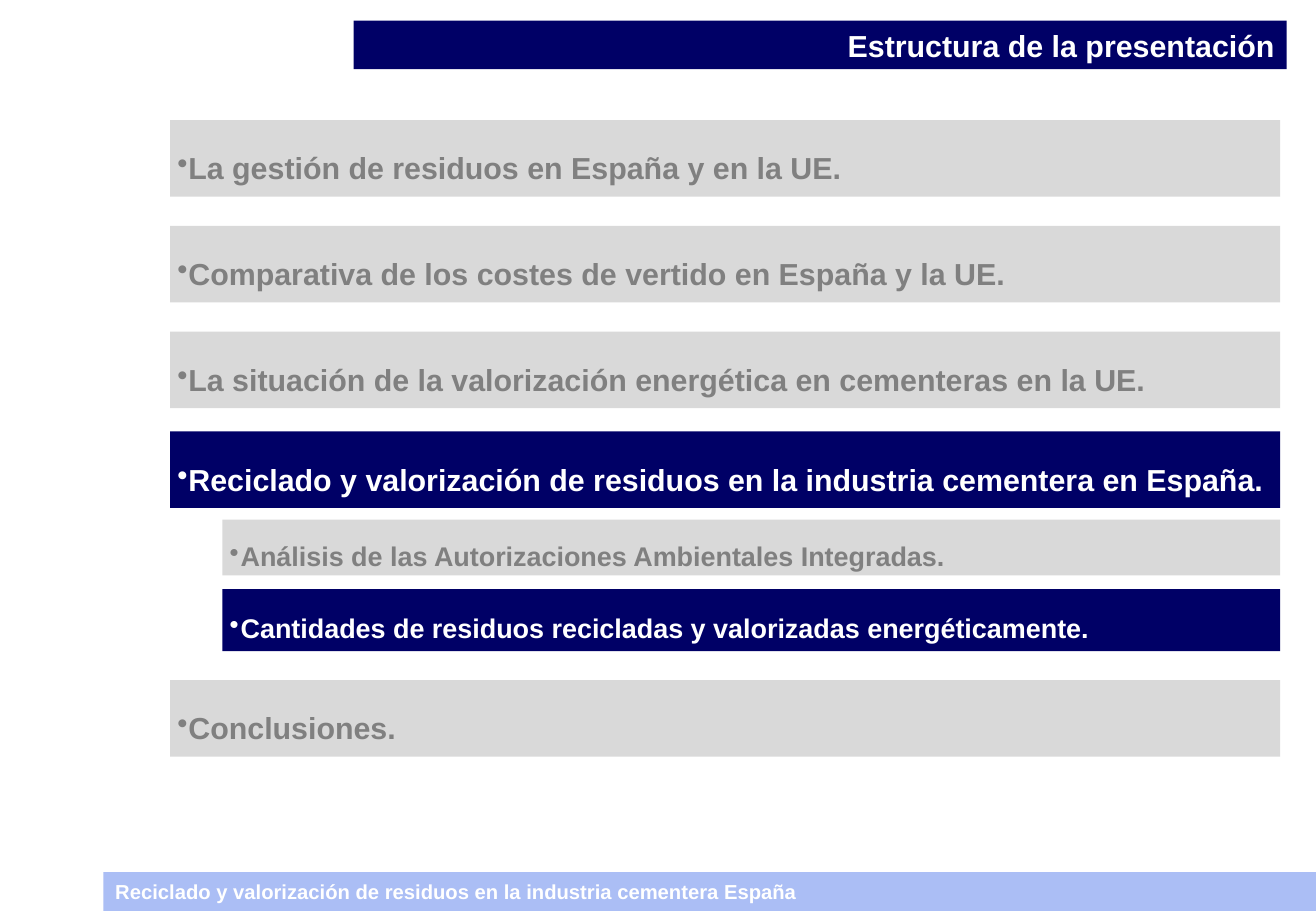
from dataclasses import dataclass

from lxml import etree
from pptx import Presentation
from pptx import util as u
from pptx.dml import color
from pptx.enum import shapes, text
from pptx.oxml import ns

WIDTH, HEIGHT = u.Inches(10.83), u.Inches(7.5)
COLORS = {"navy": "000066", "sky": "ABBEF5", "silver": "D9D9D9",
          "gray": "808080", "white": "FFFFFF"}
RIGHT = 97.28  # shared right edge of the agenda bars, % of width
TOPIC_LEFT, TOPIC_HEIGHT = 12.93, 8.4
SUBTOPIC_LEFT = 16.9
FIRST_TOP, PITCH = 13.2, 11.6  # evenly spaced opening topics
HANG = u.Inches(0.09)


@dataclass
class Bar:
    """A filled bar; its box is given in percent of the slide's size."""
    label: str
    left: float
    top: float
    width: float
    height: float
    size: int
    fill: str
    ink: str = "white"
    align: text.PP_ALIGN = text.PP_ALIGN.LEFT
    anchor: text.MSO_ANCHOR = text.MSO_ANCHOR.MIDDLE
    bullet: bool = False


def agenda_bar(label: str, top: float, active: bool = False,
               left: float = TOPIC_LEFT, height: float = TOPIC_HEIGHT,
               size: int = 18) -> Bar:
    fill, ink = ("navy", "white") if active else ("silver", "gray")
    return Bar(label, left, top, RIGHT - left, height, size, fill, ink,
               text.PP_ALIGN.JUSTIFY, bullet=True)


def rgb(name: str) -> color.RGBColor:
    return color.RGBColor.from_string(COLORS[name])


def add_bullet(p) -> None:
    pPr = p._p.get_or_add_pPr()
    pPr.set("marL", str(HANG))
    pPr.set("indent", str(-HANG))
    etree.SubElement(pPr, ns.qn("a:buChar")).set("char", "•")
    p.line_spacing = 1.5


def draw_bar(s, bar: Bar) -> None:
    sp = s.shapes.add_shape(
        shapes.MSO_SHAPE.RECTANGLE,
        round(WIDTH * bar.left / 100), round(HEIGHT * bar.top / 100),
        round(WIDTH * bar.width / 100), round(HEIGHT * bar.height / 100))
    sp.shadow.inherit = False
    sp.fill.solid()
    sp.fill.fore_color.rgb = rgb(bar.fill)
    sp.line.fill.background()

    tf = sp.text_frame
    side = u.Inches(0.06 if bar.bullet else 0.1)
    frame = {"word_wrap": True, "vertical_anchor": bar.anchor,
             "margin_left": side, "margin_right": side,
             "margin_top": u.Inches(0.05), "margin_bottom": u.Inches(0.05)}
    for name, value in frame.items():
        setattr(tf, name, value)

    p = tf.paragraphs[0]
    if bar.bullet:
        add_bullet(p)
    p.alignment = bar.align
    r = p.add_run()
    r.text = bar.label
    for name, value in {"name": "Arial", "size": u.Pt(bar.size), "bold": True}.items():
        setattr(r.font, name, value)
    r.font.color.rgb = rgb(bar.ink)


# Footer and title
FRAME = [
    Bar("Reciclado y valorización de residuos en la industria cementera España",
        7.85, 95.73, 92.15, 4.27, 12, "sky"),
    Bar("Estructura de la presentación", 26.87, 2.27, 70.91, 5.33, 18, "navy",
        align=text.PP_ALIGN.RIGHT, anchor=text.MSO_ANCHOR.TOP),
]

# Agenda
OPENING = [
    "La gestión de residuos en España y en la UE.",
    "Comparativa de los costes de vertido en España y la UE.",
    "La situación de la valorización energética en cementeras en la UE.",
]
AGENDA = [agenda_bar(label, FIRST_TOP + PITCH * i) for i, label in enumerate(OPENING)] + [
    agenda_bar("Reciclado y valorización de residuos en la industria cementera en España.",
               47.37, active=True),
    agenda_bar("Análisis de las Autorizaciones Ambientales Integradas.",
               57.05, left=SUBTOPIC_LEFT, height=6.13, size=16),
    agenda_bar("Cantidades de residuos recicladas y valorizadas energéticamente.",
               64.67, active=True, left=SUBTOPIC_LEFT, height=6.8, size=16),
    agenda_bar("Conclusiones.", 74.67),
]


def main() -> None:
    prs = Presentation()
    prs.slide_width, prs.slide_height = WIDTH, HEIGHT
    s = prs.slides.add_slide(prs.slide_layouts[6])
    for bar in FRAME + AGENDA:
        draw_bar(s, bar)
    prs.save("out.pptx")


if __name__ == "__main__":
    main()
